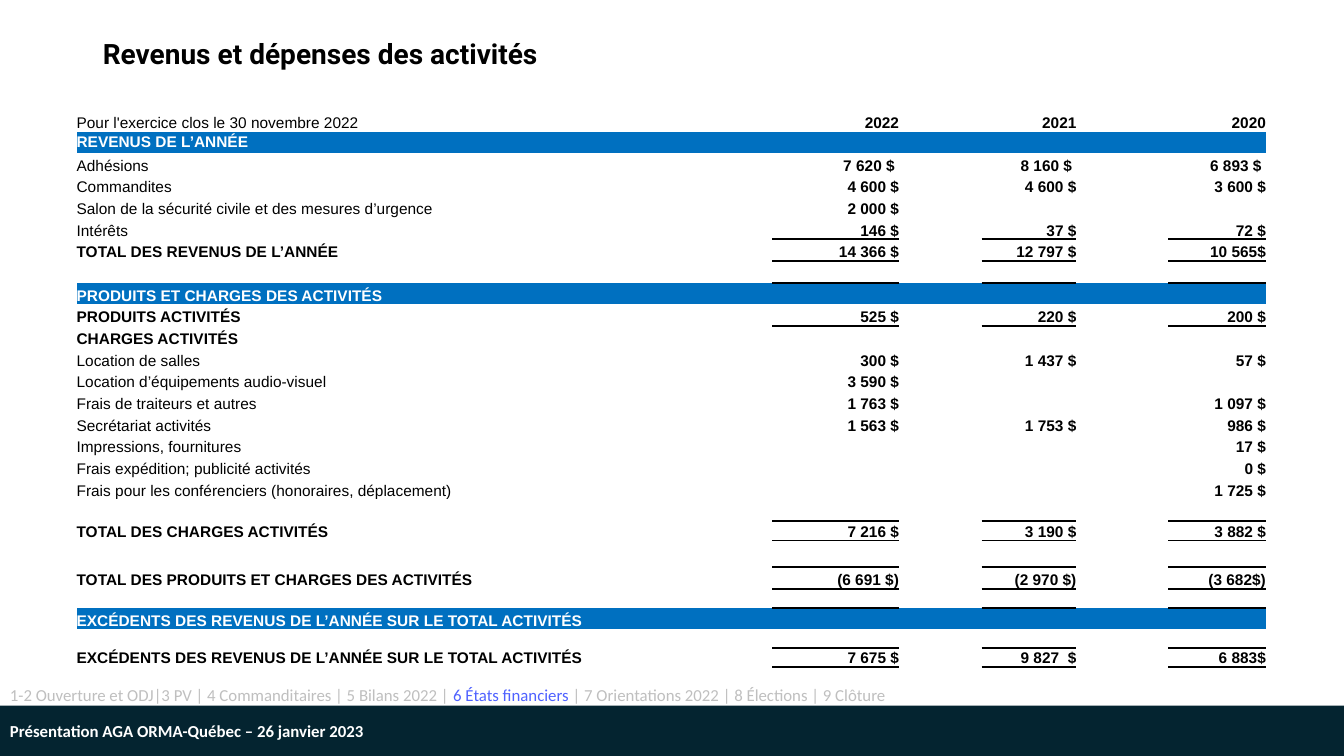
from lxml.etree import SubElement
from pptx import Presentation
from pptx.dml.color import RGBColor
from pptx.enum.shapes import MSO_SHAPE as Preset
from pptx.enum.text import MSO_ANCHOR as Anchor, MSO_AUTO_SIZE as AutoSize, PP_ALIGN as Align
from pptx.oxml.ns import qn
from pptx.util import Inches, Pt

BLACK = RGBColor(0x00, 0x00, 0x00)
WHITE = RGBColor(0xFF, 0xFF, 0xFF)
BAND_BLUE = RGBColor(0x00, 0x70, 0xC0)
NAVY = RGBColor(0x04, 0x24, 0x30)
MUTED = RGBColor(0xBF, 0xBF, 0xBF)
CURRENT = RGBColor(0x4E, 0x61, 0xFF)

GRID_COLUMNS, GRID_ROWS = 160, 90
NO_GRID_STYLE = "{2D5ABB26-0587-4C30-8999-92F81FD0307C}"

COLUMN_SPANS = [66.84, 15.96, 15.12, 9.84, 11.28, 10.92, 11.64]
ROW_SPANS = [4.75, 2.5] + [2.58] * 17 + [2.33, 3.17, 2.58, 2.25, 2.58, 2.25, 2.25]
AMOUNT_COLUMNS = (2, 4, 6)
MERGED_LABEL_ROWS = (19, 20, 23, 24, 25)
BAND_ROWS = (1, 8, 23)
BOLD_LABEL_ROWS = BAND_ROWS + (6, 9, 10, 19, 21, 25)
RULES_BELOW = {row: (WHITE, 1) for row in range(10, 18)}
RULES_BELOW.update({row: (BLACK, 1.5) for row in (5, 6, 9, 18, 19, 20, 21, 24, 25)})

STATEMENT = [
    ("Pour l'exercice clos le 30 novembre 2022", "2022", "2021", "2020"),
    ("REVENUS DE L’ANNÉE",),
    ("Adhésions", "7 620 $ ", "8 160 $ ", "6 893 $ "),
    ("Commandites", "4 600 $", "4 600 $", "3 600 $"),
    ("Salon de la sécurité civile et des mesures d’urgence", "2 000 $"),
    ("Intérêts", "146 $", "37 $", "72 $"),
    ("TOTAL DES REVENUS DE L’ANNÉE", "14 366 $", "12 797 $", "10 565$"),
    (),
    ("PRODUITS ET CHARGES DES ACTIVITÉS",),
    ("PRODUITS ACTIVITÉS", "525 $", "220 $", "200 $"),
    ("CHARGES ACTIVITÉS",),
    ("Location de salles", "300 $", "1 437 $", "57 $"),
    ("Location d’équipements audio-visuel", "3 590 $"),
    ("Frais de traiteurs et autres", "1 763 $", "", "1 097 $"),
    ("Secrétariat activités", "1 563 $", "1 753 $", "986 $"),
    ("Impressions, fournitures", "", "", "17 $"),
    ("Frais expédition; publicité activités", "", "", "0 $"),
    ("Frais pour les conférenciers (honoraires, déplacement)", "", "", "1 725 $"),
    (),
    ("TOTAL DES CHARGES ACTIVITÉS", "7 216 $", "3 190 $", "3 882 $"),
    (),
    ("TOTAL DES PRODUITS ET CHARGES DES ACTIVITÉS", "(6 691 $)", "(2 970 $)", "(3 682$)"),
    (),
    ("EXCÉDENTS DES REVENUS DE L’ANNÉE SUR LE TOTAL ACTIVITÉS",),
    (),
    ("EXCÉDENTS DES REVENUS DE L’ANNÉE SUR LE TOTAL ACTIVITÉS", "7 675 $", "9 827  $", "6 883$"),
]

AGENDA = [
    ("1-2 Ouverture et ODJ|3 PV | 4 Commanditaires | 5 Bilans 2022 | ", MUTED),
    ("6 États financiers ", CURRENT),
    ("| 7 Orientations 2022 | 8 Élections | 9 Clôture", MUTED),
]


class StatementSlide:
    """Holds the style and the current slide, and places elements on its grid."""

    def __init__(self, deck):
        self.column = deck.slide_width / GRID_COLUMNS
        self.row = deck.slide_height / GRID_ROWS
        self.slide = deck.slides.add_slide(deck.slide_layouts[5])

    def box(self, column, row, columns, rows):
        return (int(column * self.column), int(row * self.row),
                int(columns * self.column), int(rows * self.row))

    def style(self, run, font, size, color, bold=False):
        run.font.name, run.font.size = font, Pt(size)
        run.font.color.rgb, run.font.bold = color, bold

    def title(self, text, *place):
        heading = self.slide.shapes.title
        heading.left, heading.top, heading.width, heading.height = self.box(*place)
        frame = heading.text_frame
        frame.text = text
        frame.auto_size, frame.vertical_anchor = AutoSize.NONE, Anchor.MIDDLE
        paragraph = frame.paragraphs[0]
        paragraph.alignment, paragraph.line_spacing = Align.LEFT, 0.9
        self.style(paragraph.runs[0], "Roboto", 20, BLACK, True)

    def footer(self, text, *place):
        bar = self.slide.shapes.add_shape(Preset.RECTANGLE, *self.box(*place))
        bar.shadow.inherit = False
        bar.fill.solid()
        bar.fill.fore_color.rgb = NAVY
        bar.line.fill.background()
        bar.text_frame.text = text
        bar.text_frame.vertical_anchor = Anchor.MIDDLE
        paragraph = bar.text_frame.paragraphs[0]
        paragraph.alignment = Align.LEFT
        self.style(paragraph.runs[0], "Calibri", 12, WHITE, True)

    def agenda(self, parts, *place):
        frame = self.slide.shapes.add_textbox(*self.box(*place)).text_frame
        frame.word_wrap = True
        for text, color in parts:
            run = frame.paragraphs[0].add_run()
            run.text = text
            self.style(run, "Calibri", 12, color)

    def rule(self, cell, side, color, width):
        line = SubElement(cell._tc.get_or_add_tcPr(), qn(f"a:{side}"), w=str(Pt(width)))
        fill = SubElement(line, qn("a:solidFill"))
        SubElement(fill, qn("a:srgbClr"), val=str(color))

    def cell(self, cell, text, row, column):
        if column in AMOUNT_COLUMNS:
            for side, boundary in (("lnT", row - 1), ("lnB", row)):
                if boundary in RULES_BELOW:
                    self.rule(cell, side, *RULES_BELOW[boundary])
        cell.fill.solid()
        cell.fill.fore_color.rgb = BAND_BLUE if row in BAND_ROWS else WHITE
        cell.margin_left = cell.margin_right = cell.margin_top = cell.margin_bottom = 0
        cell.vertical_anchor = Anchor.MIDDLE if row == 1 else Anchor.BOTTOM
        if text:
            cell.text_frame.text = text
            paragraph = cell.text_frame.paragraphs[0]
            paragraph.alignment = Align.RIGHT if column else Align.LEFT
            self.style(paragraph.runs[0], "Arial", 11, WHITE if row in BAND_ROWS else BLACK,
                       column > 0 or row in BOLD_LABEL_ROWS)

    def statement(self, entries, column, row):
        place = self.box(column, row, sum(COLUMN_SPANS), sum(ROW_SPANS))
        frame = self.slide.shapes.add_table(len(entries), len(COLUMN_SPANS), *place)
        table = frame.table
        table.first_row = table.horz_banding = False
        frame.element.find(".//" + qn("a:tableStyleId")).text = NO_GRID_STYLE
        for grid_column, span in zip(table.columns, COLUMN_SPANS):
            grid_column.width = int(span * self.column)
        for grid_row, span in zip(table.rows, ROW_SPANS):
            grid_row.height = int(span * self.row)
        for index, entry in enumerate(entries):
            amount_columns = AMOUNT_COLUMNS if index else (1, 3, 5)
            texts = dict(zip((0, *amount_columns), entry))
            for position in range(len(COLUMN_SPANS)):
                self.cell(table.cell(index, position), texts.get(position), index, position)
        for start in (1, 3, 5):
            table.cell(0, start).merge(table.cell(0, start + 1))
        for index in MERGED_LABEL_ROWS:
            table.cell(index, 0).merge(table.cell(index, 1))
        for paragraph in frame.element.iter(qn("a:p")):
            if paragraph.find(qn("a:r")) is None:
                SubElement(paragraph, qn("a:endParaRPr"), sz="1100")


def main():
    deck = Presentation()
    deck.slide_width, deck.slide_height = Inches(13.33), Inches(7.5)
    page = StatementSlide(deck)
    page.title("Revenus et dépenses des activités", 11.04, 4.8, 58.32, 3.5)
    page.footer("Présentation AGA ORMA-Québec – 26 janvier 2023", 0, 84, GRID_COLUMNS, 6)
    page.agenda(AGENDA, 0, 80.88, GRID_COLUMNS, 6)
    page.statement(STATEMENT, 9.12, 10.92)
    deck.save("out.pptx")


if __name__ == "__main__":
    main()
